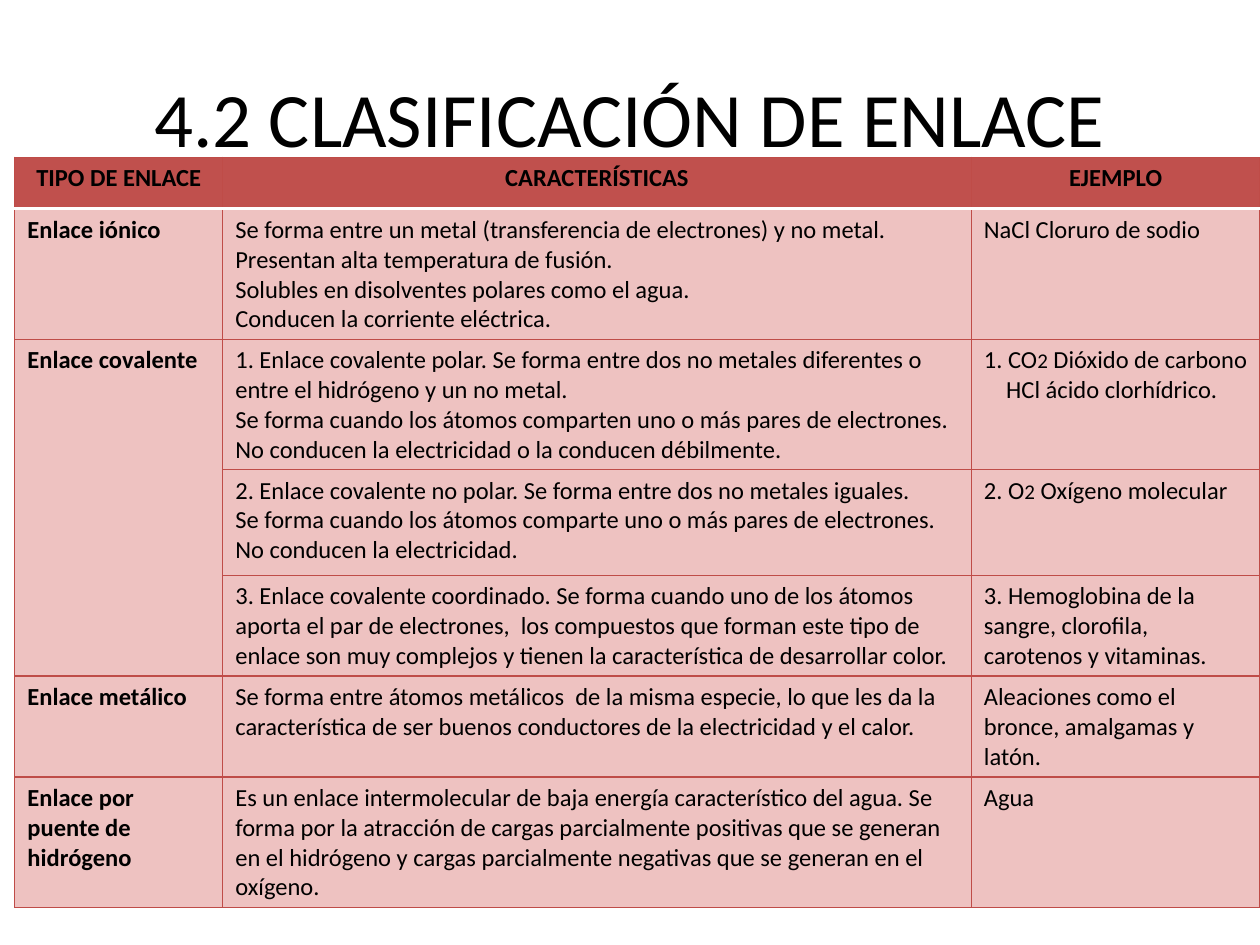
from dataclasses import dataclass

from lxml.etree import SubElement
from pptx import Presentation
from pptx.dml.color import RGBColor
from pptx.enum.text import MSO_ANCHOR, PP_ALIGN
from pptx.oxml.ns import qn
from pptx.util import Cm, Pt

COLOURS = {
    "text": "000000",
    "header": "C0504D",
    "body": "EEC2C1",
    "border": "BF4C48",
    "divider": "FFFFFF",
}
FONT = "Calibri"
TITLE_SIZE, TEXT_SIZE, FORMULA_SIZE = 44, 14, 12
COLUMN_WIDTHS = (4.19, 15.09, 5.82)
ROW_HEIGHTS = (1.04, 2.13, 2.62, 2.13, 1.75, 1.19, 2.18)
HEADINGS = ("TIPO DE ENLACE", "CARACTERÍSTICAS", "EJEMPLO")


@dataclass
class Line:
    text: str  # digits between bars are set in the formula size
    indent: float = 0


@dataclass
class Bond:
    name: str
    features: list[Line]
    examples: list[Line]


BONDS = [
    Bond("Enlace iónico",
         [Line("Se forma entre un metal (transferencia de electrones) y no metal."),
          Line("Presentan alta temperatura de fusión."),
          Line("Solubles en disolventes polares como el agua."),
          Line("Conducen la corriente eléctrica.")],
         [Line("NaCl Cloruro de sodio")]),
    Bond("Enlace covalente",
         [Line("1. Enlace covalente polar. Se forma entre dos no metales diferentes o "
               "entre el hidrógeno y un no metal."),
          Line("Se forma cuando los átomos comparten uno o más pares de electrones."),
          Line("No conducen la electricidad o la conducen débilmente.")],
         [Line("1. CO|2| Dióxido de carbono"),
          Line("HCl ácido clorhídrico.", indent=0.45)]),
    Bond("",
         [Line("2. Enlace covalente no polar. Se forma entre dos no metales iguales."),
          Line("Se forma cuando los átomos comparte uno o más pares de electrones."),
          Line("No conducen la electricidad.")],
         [Line("2. O|2| Oxígeno molecular")]),
    Bond("",
         [Line("3. Enlace covalente coordinado. Se forma cuando uno de los átomos aporta "
               "el par de electrones,  los compuestos que forman este tipo de enlace son "
               "muy complejos y tienen la característica de desarrollar color.")],
         [Line("3. Hemoglobina de la sangre, clorofila, carotenos y vitaminas.")]),
    Bond("Enlace metálico",
         [Line("Se forma entre átomos metálicos  de la misma especie, lo que les da la "
               "característica de ser buenos conductores de la electricidad y el calor.")],
         [Line("Aleaciones como el bronce, amalgamas y latón.")]),
    Bond("Enlace por puente de hidrógeno",
         [Line("Es un enlace intermolecular de baja energía característico del agua. Se "
               "forma por la atracción de cargas parcialmente positivas que se generan en "
               "el hidrógeno y cargas parcialmente negativas que se generan en el oxígeno.")],
         [Line("Agua")]),
]


def write_lines(text_frame, lines: list[Line], size: float, bold: bool = False,
                alignment=PP_ALIGN.LEFT) -> None:
    for index, line in enumerate(lines):
        paragraph = text_frame.paragraphs[0] if index == 0 else text_frame.add_paragraph()
        paragraph.alignment = alignment
        if line.indent:
            paragraph._p.get_or_add_pPr().set("indent", str(Cm(line.indent)))
        for part_index, part in enumerate(line.text.split("|")):
            run = paragraph.add_run()
            run.text = part
            run_size = FORMULA_SIZE if part_index % 2 else size
            font_values = {"name": FONT, "size": Pt(run_size), "bold": bold}
            for attribute, value in font_values.items():
                setattr(run.font, attribute, value)
            run.font.color.rgb = RGBColor.from_string(COLOURS["text"])


def set_borders(cell, row: int) -> None:
    properties = cell._tc.get_or_add_tcPr()
    divider_side = {0: "lnB", 1: "lnT"}.get(row)
    for side in ("lnL", "lnR", "lnT", "lnB"):
        colour, width = ("divider", 2) if side == divider_side else ("border", 0.75)
        border = SubElement(properties, qn(f"a:{side}"), w=str(Pt(width)))
        fill = SubElement(border, qn("a:solidFill"))
        SubElement(fill, qn("a:srgbClr"), val=COLOURS[colour])


def add_title(slide, text: str) -> None:
    text_frame = slide.shapes.add_textbox(Cm(1.27), Cm(0.76), Cm(22.86), Cm(3.18)).text_frame
    text_frame.word_wrap = True
    text_frame.vertical_anchor = MSO_ANCHOR.MIDDLE
    write_lines(text_frame, [Line(text)], TITLE_SIZE, alignment=PP_ALIGN.CENTER)


def add_bond_table(slide) -> None:
    table = slide.shapes.add_table(len(ROW_HEIGHTS), len(COLUMN_WIDTHS), Cm(0.3), Cm(3.17),
                                   Cm(sum(COLUMN_WIDTHS)), Cm(sum(ROW_HEIGHTS))).table
    for column, width in zip(table.columns, COLUMN_WIDTHS):
        column.width = Cm(width)
    for row, height in zip(table.rows, ROW_HEIGHTS):
        row.height = Cm(height)

    # The covalent bond covers three rows
    table.cell(2, 0).merge(table.cell(4, 0))

    contents = [[[Line(heading)] for heading in HEADINGS]]
    contents += [[[Line(bond.name)] if bond.name else [], bond.features, bond.examples]
                 for bond in BONDS]
    for row_index, row_contents in enumerate(contents):
        is_header = row_index == 0
        for column_index, lines in enumerate(row_contents):
            cell = table.cell(row_index, column_index)
            set_borders(cell, row_index)
            cell.fill.solid()
            fill_colour = COLOURS["header" if is_header else "body"]
            cell.fill.fore_color.rgb = RGBColor.from_string(fill_colour)
            write_lines(cell.text_frame, lines, TEXT_SIZE,
                        bold=is_header or column_index == 0,
                        alignment=PP_ALIGN.CENTER if is_header else PP_ALIGN.LEFT)


def main() -> None:
    presentation = Presentation()
    presentation.slide_width, presentation.slide_height = Cm(25.4), Cm(19.05)
    slide = presentation.slides.add_slide(presentation.slide_layouts[6])
    add_title(slide, "4.2 CLASIFICACIÓN DE ENLACE")
    add_bond_table(slide)
    presentation.save("out.pptx")


if __name__ == "__main__":
    main()
